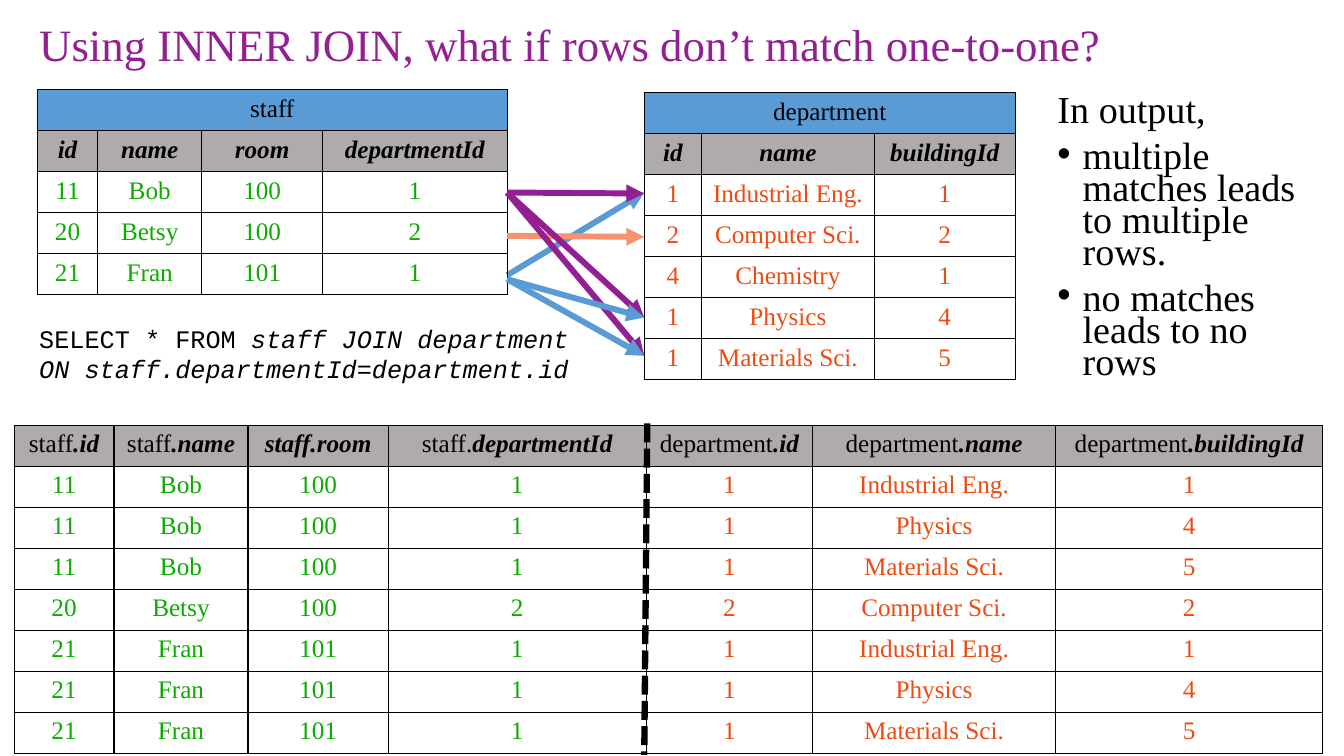
from lxml.etree import SubElement
from pptx import Presentation
from pptx.dml.color import RGBColor
from pptx.enum.dml import MSO_LINE_DASH_STYLE as Dash
from pptx.enum.shapes import MSO_CONNECTOR as Connector
from pptx.enum.text import MSO_ANCHOR as Anchor, PP_ALIGN as Align
from pptx.oxml.ns import qn
from pptx.util import Inches, Pt

COLORS = {
    "black": "000000",
    "purple": "932092",
    "blue": "5B9BD5",
    "salmon": "F59370",
    "gray": "AFABAB",
    "green": "0CAB00",
    "orange": "ED4B11",
}
SERIF = "Times New Roman"
MONO = "Courier New"
ROW_HEIGHT = 0.407

STAFF_HEADS = ["id", "name", "room", "departmentId"]
STAFF = [
    ("11", "Bob", "100", "1"),
    ("20", "Betsy", "100", "2"),
    ("21", "Fran", "101", "1"),
]
DEPARTMENT_HEADS = ["id", "name", "buildingId"]
DEPARTMENTS = [
    ("1", "Industrial Eng.", "1"),
    ("2", "Computer Sci.", "2"),
    ("4", "Chemistry", "1"),
    ("1", "Physics", "4"),
    ("1", "Materials Sci.", "5"),
]
JOINED_HEADS = [
    ("staff", ".id"),
    ("staff", ".name"),
    ("", "staff.room"),
    ("staff.", "departmentId"),
    ("department", ".id"),
    ("department", ".name"),
    ("department", ".buildingId"),
]


def rgb(color):
    return RGBColor.from_string(COLORS[color])


def add_run(paragraph, text, size, color="black", font=SERIF, bold=False, italic=False):
    run = paragraph.add_run()
    run.text = text
    run.font.size = Pt(size)
    run.font.name = font
    run.font.bold = bold
    run.font.italic = italic
    run.font.color.rgb = rgb(color)


def add_text_frame(slide, left, top, width, height):
    frame = slide.shapes.add_textbox(
        Inches(left), Inches(top), Inches(width), Inches(height)
    ).text_frame
    frame.word_wrap = True
    return frame


def add_bullet(paragraph):
    props = paragraph._p.get_or_add_pPr()
    props.set("marL", str(Inches(0.25)))
    props.set("indent", str(Inches(-0.25)))
    SubElement(props, qn("a:buFont"), typeface="Arial")
    SubElement(props, qn("a:buChar"), char="•")


def add_borders(cell):
    props = cell._tc.get_or_add_tcPr()
    for side in ("lnL", "lnR", "lnT", "lnB"):
        border = SubElement(props, qn(f"a:{side}"), w=str(Pt(1)))
        fill = SubElement(border, qn("a:solidFill"))
        SubElement(fill, qn("a:srgbClr"), val=COLORS["black"])


def style_cell(cell, fill=None):
    add_borders(cell)
    if fill:
        cell.fill.solid()
        cell.fill.fore_color.rgb = rgb(fill)
    else:
        cell.fill.background()
    paragraph = cell.text_frame.paragraphs[0]
    paragraph.alignment = Align.CENTER
    return paragraph


def add_grid(slide, left, top, widths, heads, rows, colors, caption=None):
    head_row = 1 if caption else 0
    row_count = head_row + 1 + len(rows)
    table = slide.shapes.add_table(
        row_count, len(widths), Inches(left), Inches(top),
        Inches(sum(widths)), Inches(ROW_HEIGHT * row_count),
    ).table
    for column, width in zip(table.columns, widths):
        column.width = Inches(width)
    for row in table.rows:
        row.height = Inches(ROW_HEIGHT)
    if caption:
        captions = [style_cell(cell, "blue") for cell in table.rows[0].cells]
        add_run(captions[0], caption, 18)
        table.cell(0, 0).merge(table.cell(0, len(widths) - 1))
    for col, (prefix, field) in enumerate(heads):
        paragraph = style_cell(table.cell(head_row, col), "gray")
        if prefix:
            add_run(paragraph, prefix, 18)
        add_run(paragraph, field, 18, bold=True, italic=True)
    for row, values in enumerate(rows, head_row + 1):
        for col, (value, color) in enumerate(zip(values, colors)):
            add_run(style_cell(table.cell(row, col)), value, 18, color)


def add_line(slide, start, end, color, width):
    connector = slide.shapes.add_connector(
        Connector.STRAIGHT, *(Inches(value) for value in (*start, *end))
    )
    connector.line.color.rgb = rgb(color)
    connector.line.width = Pt(width)
    SubElement(connector._element.spPr, qn("a:effectLst"))
    return connector.line


def add_match(slide, start_y, end_y, color):
    line = add_line(slide, (5.03, start_y), (6.39, end_y), color, 4.25)
    SubElement(line._get_or_add_ln(), qn("a:tailEnd"), type="triangle")


def add_title(slide, text):
    frame = add_text_frame(slide, 0.29, 0.08, 11.55, 0.77)
    frame.vertical_anchor = Anchor.MIDDLE
    paragraph = frame.paragraphs[0]
    paragraph.line_spacing = 0.9
    add_run(paragraph, text, 32, "purple")


def add_output_notes(slide, intro, points):
    frame = add_text_frame(slide, 10.39, 0.92, 2.73, 3.19)
    for index, text in enumerate([intro, *points]):
        paragraph = frame.add_paragraph() if index else frame.paragraphs[0]
        paragraph.line_spacing = 0.7
        paragraph.space_before = Pt(10)
        if index:
            add_bullet(paragraph)
        add_run(paragraph, text, 27.2)


def add_query(slide, keywords, clause):
    paragraph = add_text_frame(slide, 0.29, 3.16, 5.61, 0.71).paragraphs[0]
    add_run(paragraph, keywords, 18, font=MONO)
    add_run(paragraph, clause, 18, font=MONO, italic=True)


def main():
    deck = Presentation()
    deck.slide_width, deck.slide_height = Inches(13.33), Inches(7.5)
    slide = deck.slides.add_slide(deck.slide_layouts[6])

    add_match(slide, 2.73, 1.91, "blue")
    add_grid(slide, 0.37, 0.89, [0.6, 1.03, 1.2, 1.83],
             [("", head) for head in STAFF_HEADS], STAFF, ["green"] * 4, "staff")
    add_grid(slide, 6.39, 0.92, [0.57, 1.71, 1.4],
             [("", head) for head in DEPARTMENT_HEADS], DEPARTMENTS,
             ["orange"] * 3, "department")
    for start_y, end_y, color in [
        (1.91, 1.92, "purple"),
        (2.34, 2.35, "salmon"),
        (1.91, 3.15, "purple"),
        (1.91, 3.53, "purple"),
    ]:
        add_match(slide, start_y, end_y, color)

    add_title(slide, "Using INNER JOIN, what if rows don’t match one-to-one?")
    add_output_notes(slide, "In output,", [
        "multiple matches leads to multiple rows.",
        "no matches leads to no rows",
    ])

    joined = [person + unit for person in STAFF for unit in DEPARTMENTS
              if person[-1] == unit[0]]
    add_grid(slide, 0.14, 4.22, [0.99, 1.33, 1.39, 2.56, 1.65, 2.41, 2.65],
             JOINED_HEADS, joined, ["green"] * 4 + ["orange"] * 3)
    divider = add_line(slide, (6.42, 4.2), (6.39, 7.49), "black", 4.5)
    divider.dash_style = Dash.SQUARE_DOT
    for end_y in (3.15, 3.53):
        add_match(slide, 2.77, end_y, "blue")
    add_query(slide, "SELECT * FROM ",
              "staff JOIN department ON staff.departmentId=department.id")
    deck.save("out.pptx")


if __name__ == "__main__":
    main()
